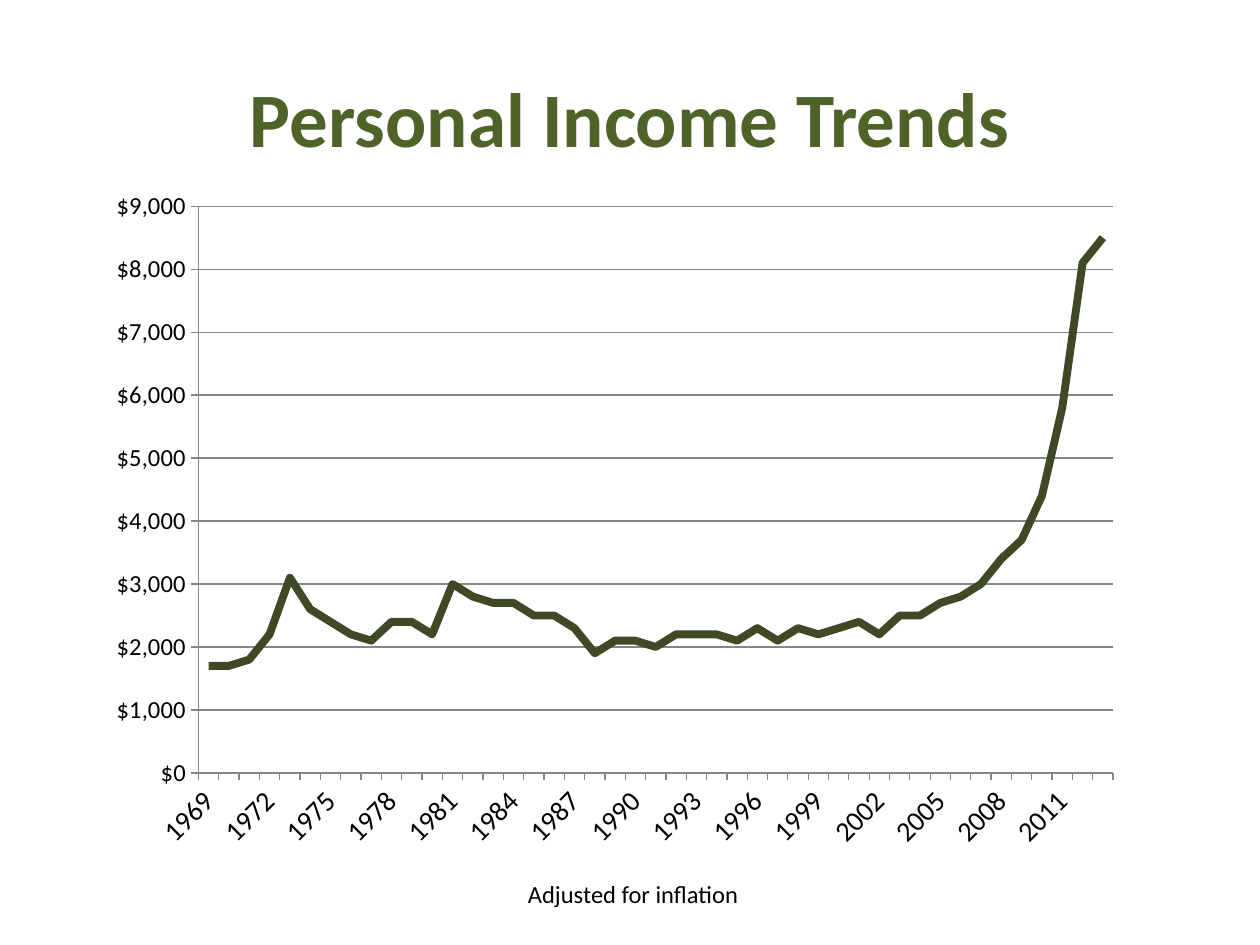
from dataclasses import dataclass

from lxml.etree import SubElement
from pptx import Presentation
from pptx.chart.data import CategoryChartData
from pptx.dml.color import RGBColor
from pptx.enum.chart import XL_CHART_TYPE, XL_TICK_MARK
from pptx.enum.text import MSO_ANCHOR, PP_ALIGN
from pptx.oxml import parse_xml
from pptx.oxml.ns import nsdecls, qn
from pptx.util import Inches, Pt


@dataclass(frozen=True)
class Theme:
    """Colours, typeface and type sizes of the slide."""

    font: str = "Calibri"
    title: str = "4F6228"
    text: str = "000000"
    income: str = "3F4926"
    grid: str = "868686"
    title_size: int = 44
    year_size: int = 16
    label_size: int = 14
    line_width: float = 4.5
    grid_width: float = 0.75


THEME = Theme()
WIDTH, HEIGHT = Inches(10), Inches(7.5)
FIRST_YEAR = 1969
YEARS_PER_LABEL = 3
INCOME_STEP = 100_000
INCOME = [
    17, 17, 18, 22, 31, 26, 24, 22, 21, 24, 24, 22, 30, 28, 27,
    27, 25, 25, 23, 19, 21, 21, 20, 22, 22, 22, 21, 23, 21, 23,
    22, 23, 24, 22, 25, 25, 27, 28, 30, 34, 37, 44, 58, 81, 85,
]


def place(left, top, width, height):
    """Turn inches into left, top, width and height lengths."""
    return [Inches(value) for value in (left, top, width, height)]


def style_font(font, size, color=THEME.text, bold=False):
    """Apply typeface, size, colour and weight."""
    font.name = THEME.font
    font.size = Pt(size)
    font.bold = bold
    font.color.rgb = RGBColor.from_string(color)


def style_line(line, color, width):
    """Apply a solid colour and a width in points."""
    line.color.rgb = RGBColor.from_string(color)
    line.width = Pt(width)


def add_text(page, area, text, size, color=THEME.text, bold=False, wrap=True):
    """Add a centred line of text."""
    box = page.shapes.add_textbox(*place(*area))
    frame = box.text_frame
    frame.text = text
    frame.word_wrap = wrap
    frame.vertical_anchor = MSO_ANCHOR.MIDDLE
    paragraph = frame.paragraphs[0]
    paragraph.alignment = PP_ALIGN.CENTER
    style_font(paragraph.runs[0].font, size, color, bold)


def style_axis(axis, size):
    """Style the line, ticks and labels of an axis."""
    axis.major_tick_mark = XL_TICK_MARK.OUTSIDE
    axis.minor_tick_mark = XL_TICK_MARK.NONE
    style_line(axis.format.line, THEME.grid, THEME.grid_width)
    style_font(axis.tick_labels.font, size)


def slant_years(axis):
    """Slant the year labels and show every third one."""
    element = axis._element
    element.find(qn("c:txPr")).find(qn("a:bodyPr")).set("rot", "-2700000")
    skip = parse_xml(f'<c:tickLblSkip {nsdecls("c")} val="{YEARS_PER_LABEL}"/>')
    element.find(qn("c:lblOffset")).addnext(skip)
    skip.addnext(parse_xml(f'<c:tickMarkSkip {nsdecls("c")} val="1"/>'))


def fix_plot_area(chart, **shares):
    """Pin the inner plot area to shares of the chart's size."""
    area = chart._chartSpace.chart.plotArea
    for layout in area.findall(qn("c:layout")):
        area.remove(layout)
    layout = parse_xml(f'<c:layout {nsdecls("c")}/>')
    manual = SubElement(layout, qn("c:manualLayout"))
    settings = {"layoutTarget": "inner", "xMode": "edge", "yMode": "edge", **shares}
    for name, value in settings.items():
        SubElement(manual, qn(f"c:{name}")).set("val", str(value))
    area.insert(0, layout)


def add_income_chart(page, area):
    """Add the line chart of income by year."""
    data = CategoryChartData()
    data.categories = [str(FIRST_YEAR + index) for index in range(len(INCOME))]
    data.add_series("Series 1", [value * INCOME_STEP for value in INCOME])
    chart = page.shapes.add_chart(XL_CHART_TYPE.LINE, *place(*area), data).chart
    chart.has_legend = False
    chart.has_title = False
    style_font(chart.font, 10)
    chart.plots[0].vary_by_categories = False

    series = chart.plots[0].series[0]
    series.smooth = False
    style_line(series.format.line, THEME.income, THEME.line_width)

    years, dollars = chart.category_axis, chart.value_axis
    style_axis(years, THEME.year_size)
    slant_years(years)
    style_axis(dollars, THEME.label_size)
    dollars.minimum_scale = 0
    dollars.maximum_scale = 9_000_000
    dollars.major_unit = 1_000_000
    dollars.tick_labels.number_format = '"$"#,##0,'
    dollars.tick_labels.number_format_is_linked = False
    style_line(dollars.major_gridlines.format.line, THEME.grid, THEME.grid_width)
    fix_plot_area(chart, x=0.1, y=0.04, w=0.88, h=0.83)


def main():
    """Build and save the slide."""
    deck = Presentation()
    deck.slide_width, deck.slide_height = WIDTH, HEIGHT
    page = deck.slides.add_slide(deck.slide_layouts[6])
    add_text(page, (0.5, 0.3, 9, 1.25), "Personal Income Trends",
             THEME.title_size, THEME.title, bold=True)
    add_income_chart(page, (0.75, 1.42, 8.25, 5.42))
    add_text(page, (4.08, 6.92, 1.89, 0.34), "Adjusted for inflation",
             THEME.label_size, wrap=False)
    deck.save("out.pptx")


if __name__ == "__main__":
    main()
